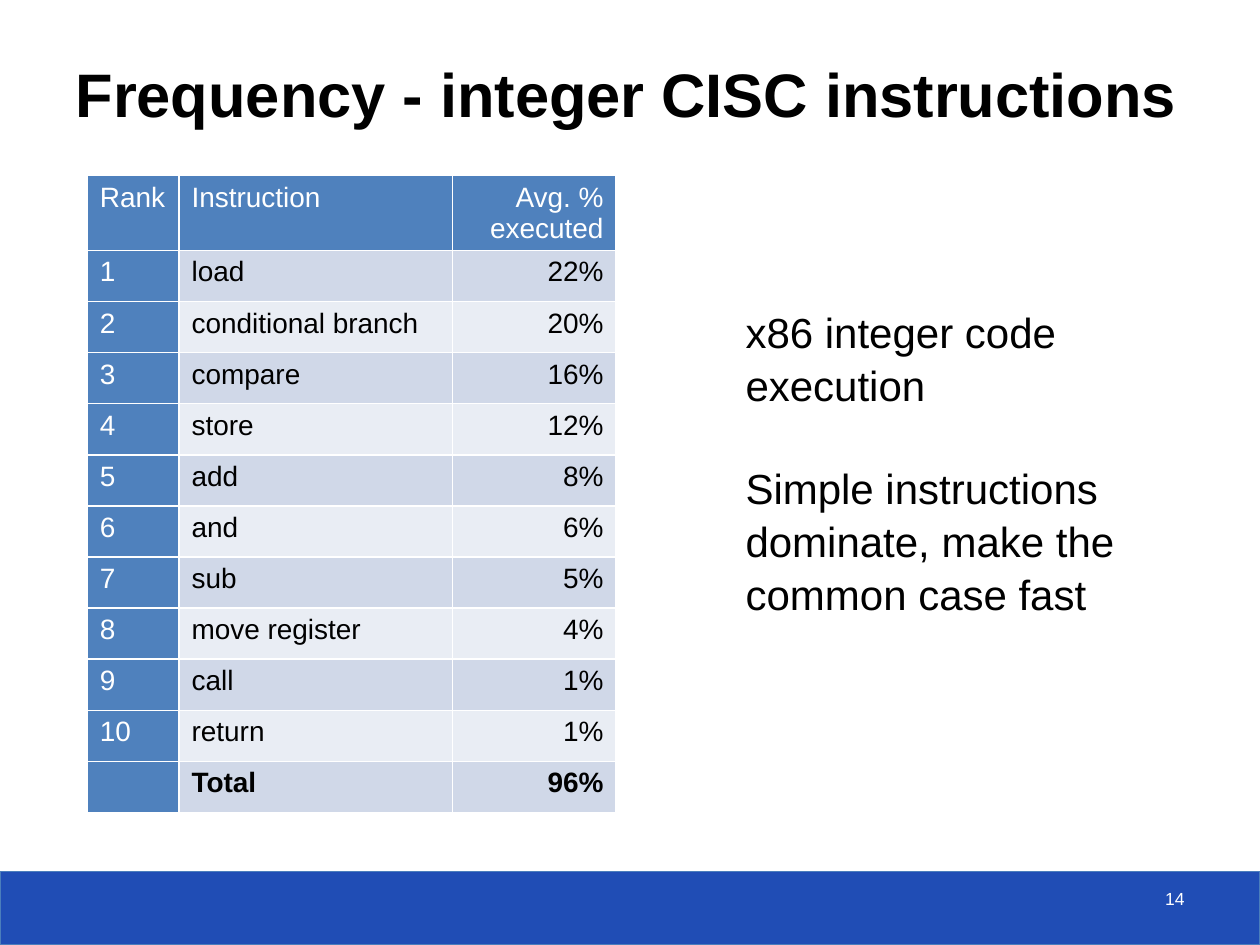
from lxml import etree
from pptx import Presentation
from pptx.dml.color import RGBColor
from pptx.enum.shapes import MSO_SHAPE
from pptx.enum.text import MSO_ANCHOR, MSO_AUTO_SIZE, PP_ALIGN
from pptx.oxml.ns import qn
from pptx.util import Cm, Pt

LEFT, RIGHT = PP_ALIGN.LEFT, PP_ALIGN.RIGHT
BOTTOM, NO_FIT = MSO_ANCHOR.BOTTOM, MSO_AUTO_SIZE.NONE
RECT = MSO_SHAPE.RECTANGLE

WHITE = RGBColor(0xFF, 0xFF, 0xFF)
BLACK = RGBColor(0, 0, 0)
FOOTER_BLUE = RGBColor(0x20, 0x4D, 0xB5)
FOOTER_LINE = RGBColor(0x4B, 0x7E, 0xBC)
HEAD_BLUE = RGBColor(0x4F, 0x81, 0xBD)
BANDS = [RGBColor(0xD0, 0xD8, 0xE8), RGBColor(0xE9, 0xED, 0xF4)]
FONT = "Arial"

# Content
TITLE = "Frequency - integer CISC instructions"
HEADER = ("Rank", "Instruction", "Avg. % executed")
FREQUENCIES = [
    ("load", 22), ("conditional branch", 20), ("compare", 16), ("store", 12),
    ("add", 8), ("and", 6), ("sub", 5), ("move register", 4),
    ("call", 1), ("return", 1),
]
NOTES = ["x86 integer code execution",
         "Simple instructions dominate, make the common case fast"]
PAGE = "14"

# Table layout in cm
COLUMN_WIDTHS = (1.85, 5.51, 3.3)
HEADER_HEIGHT, ROW_HEIGHT = 1.5, 1.03


def style(p, size, color, bold=False, align=LEFT):
    p.alignment = align
    for r in p.runs:
        r.font.name, r.font.size, r.font.bold = FONT, Pt(size), bold
        r.font.color.rgb = color


def set_borders(cell, color, width):
    tc_pr = cell._tc.get_or_add_tcPr()
    for side in ("a:lnL", "a:lnR", "a:lnT", "a:lnB"):
        ln = etree.SubElement(tc_pr, qn(side), w=str(Pt(width)))
        fill = etree.SubElement(ln, qn("a:solidFill"))
        etree.SubElement(fill, qn("a:srgbClr"), val=str(color))


prs = Presentation()
prs.slide_width, prs.slide_height = Cm(25.4), Cm(19.05)
s = prs.slides.add_slide(prs.slide_layouts[5])

# Footer band
band = s.shapes.add_shape(RECT, 0, Cm(17.57), prs.slide_width, Cm(1.48))
band.shadow.inherit = False
band.fill.solid()
band.fill.fore_color.rgb = FOOTER_BLUE
band.line.color.rgb = FOOTER_LINE
band.line.width = Pt(0.75)

# Title
title = s.shapes.title
title.left, title.top, title.width, title.height = Cm(1.27), Cm(0.64), Cm(23.42), Cm(2.1)
tf = title.text_frame
tf.text = TITLE
tf.auto_size, tf.vertical_anchor = NO_FIT, BOTTOM
style(tf.paragraphs[0], 35.1, BLACK, bold=True)

# Frequency table
rows = [HEADER]
rows += [(str(rank), name, f"{share}%")
         for rank, (name, share) in enumerate(FREQUENCIES, 1)]
rows.append(("", "Total", f"{sum(share for _, share in FREQUENCIES) + 1}%"))
heights = [HEADER_HEIGHT] + [ROW_HEIGHT] * (len(rows) - 1)
table = s.shapes.add_table(len(rows), len(HEADER), Cm(1.76), Cm(3.54),
                           Cm(sum(COLUMN_WIDTHS)), Cm(sum(heights))).table
for column, width in zip(table.columns, COLUMN_WIDTHS):
    column.width = Cm(width)
for i, (values, height) in enumerate(zip(rows, heights)):
    table.rows[i].height = Cm(height)
    for j, value in enumerate(values):
        cell = table.cell(i, j)
        is_head = i == 0 or j == 0
        cell.text = value
        style(cell.text_frame.paragraphs[0], 16, WHITE if is_head else BLACK,
              bold=i == len(rows) - 1, align=RIGHT if j == 2 else LEFT)
        set_borders(cell, WHITE, 1)
        cell.fill.solid()
        cell.fill.fore_color.rgb = HEAD_BLUE if is_head else BANDS[(i - 1) % 2]

# Remarks beside the table
tf = s.shapes.add_textbox(Cm(14.78), Cm(6), Cm(8.97), Cm(6.4)).text_frame
tf.word_wrap = True
for i, note in enumerate(NOTES):
    p = tf.add_paragraph() if i else tf.paragraphs[0]
    p.text = note
    p.line_spacing = 1.05
    if i:
        p.space_before = Pt(29)
    style(p, 24, BLACK)

# Page number
tf = s.shapes.add_textbox(Cm(18.21), Cm(17.78), Cm(5.92), Cm(0.84)).text_frame
tf.word_wrap = True
tf.text = PAGE
style(tf.paragraphs[0], 10, WHITE, align=RIGHT)

prs.save("out.pptx")
